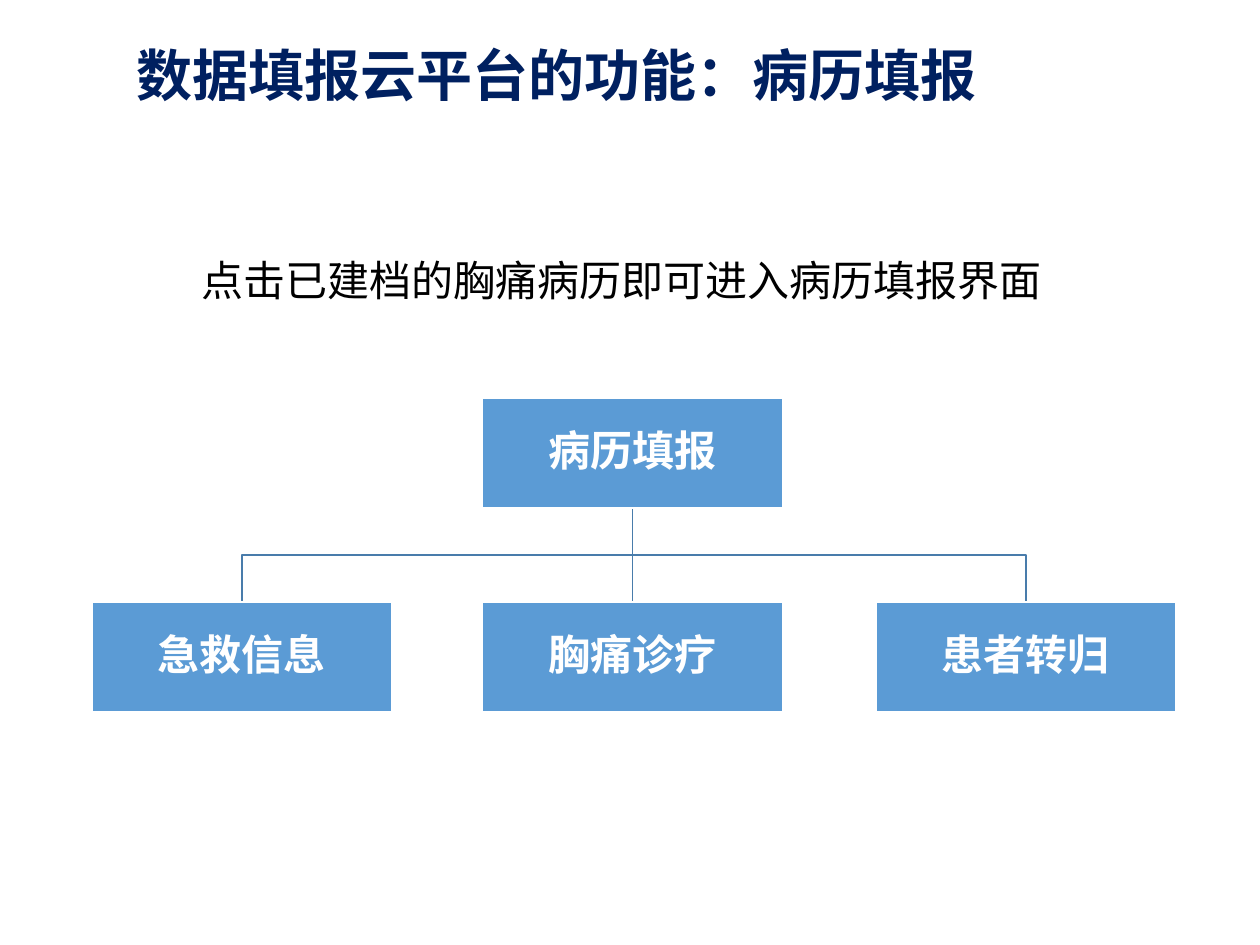
"""Build the slide on the record-filling function of the data platform."""
from lxml import etree
from pptx import Presentation
from pptx.dml.color import RGBColor
from pptx.enum.shapes import MSO_CONNECTOR, MSO_SHAPE
from pptx.enum.text import MSO_ANCHOR, MSO_AUTO_SIZE, PP_ALIGN
from pptx.oxml.ns import qn
from pptx.util import Inches, Pt

RECT = MSO_SHAPE.RECTANGLE
STRAIGHT = MSO_CONNECTOR.STRAIGHT
MIDDLE = MSO_ANCHOR.MIDDLE
LEFT, CENTER = PP_ALIGN.LEFT, PP_ALIGN.CENTER

FONT = "Noto Sans CJK SC"
COLORS = {"title": "002060", "body": "000000", "box": "5B9BD5",
          "white": "FFFFFF", "link": "497CAB"}
BOX_W, BOX_H = 2.38, 0.87
ROOT = ("病历填报", 3.83, 3.16)
CHILD_TOP = 4.78
CHILDREN = [("急救信息", 0.73), ("胸痛诊疗", 3.83), ("患者转归", 6.95)]


def color(name):
    return RGBColor.from_string(COLORS[name])


def write(tf, text, size, fill, bold=False, **layout):
    p = tf.paragraphs[0]
    for key, value in layout.items():
        setattr(p, key, value)
    r = p.add_run()
    r.text = text
    for key, value in {"name": FONT, "size": Pt(size), "bold": bold}.items():
        setattr(r.font, key, value)
    r.font.color.rgb = color(fill)
    ea = etree.SubElement(r._r.get_or_add_rPr(), qn("a:ea"))
    ea.set("typeface", FONT)


def set_line(sp, name):
    sp.line.color.rgb = color(name)
    sp.line.width = Pt(1)


def add_title(s, text):
    sp = s.shapes.title
    frame = {"left": 0.98, "top": 0.24, "width": 8.2, "height": 0.76}
    for key, value in frame.items():
        setattr(sp, key, Inches(value))
    sp.text_frame.vertical_anchor = MIDDLE
    write(sp.text_frame, text, 32, "title", True, alignment=LEFT, line_spacing=0.9)


def add_caption(s, text):
    sp = s.shapes.add_textbox(Inches(1.5), Inches(1.97), Inches(7.03), Inches(0.5))
    tf = sp.text_frame
    tf.word_wrap = False
    tf.auto_size = MSO_AUTO_SIZE.SHAPE_TO_FIT_TEXT
    write(tf, text, 24, "body")


def add_box(s, text, left, top):
    sp = s.shapes.add_shape(RECT, Inches(left), Inches(top), Inches(BOX_W), Inches(BOX_H))
    sp.shadow.inherit = False
    sp.fill.solid()
    sp.fill.fore_color.rgb = color("box")
    set_line(sp, "white")
    tf = sp.text_frame
    tf.word_wrap = True
    tf.vertical_anchor = MIDDLE
    for side in ("left", "top", "right", "bottom"):
        setattr(tf, f"margin_{side}", Inches(0.02))
    write(tf, text, 24, "white", True, alignment=CENTER,
          line_spacing=0.9, space_after=Pt(8.4))


def add_link(s, x1, y1, x2, y2):
    if x1 == x2:
        sp = s.shapes.add_connector(STRAIGHT, Inches(x1), Inches(y1), Inches(x2), Inches(y2))
        etree.SubElement(sp._element.spPr, qn("a:effectLst"))
    else:
        mid = (y1 + y2) / 2
        fb = s.shapes.build_freeform(Inches(x1), Inches(y1))
        points = [(x1, mid), (x2, mid), (x2, y2)]
        fb.add_line_segments([(Inches(x), Inches(y)) for x, y in points], close=False)
        sp = fb.convert_to_shape()
        sp.shadow.inherit = False
        sp.fill.background()
    set_line(sp, "link")


def add_tree(s):
    _, root_left, root_top = ROOT
    for _, left in CHILDREN:
        add_link(s, root_left + BOX_W / 2, root_top + BOX_H, left + BOX_W / 2, CHILD_TOP)
    add_box(s, *ROOT)
    for text, left in CHILDREN:
        add_box(s, text, left, CHILD_TOP)


def main():
    prs = Presentation()
    prs.slide_width, prs.slide_height = Inches(10), Inches(7.5)
    s = prs.slides.add_slide(prs.slide_layouts[5])
    add_title(s, "数据填报云平台的功能：病历填报")
    add_tree(s)
    add_caption(s, "点击已建档的胸痛病历即可进入病历填报界面")
    prs.save("out.pptx")


if __name__ == "__main__":
    main()
